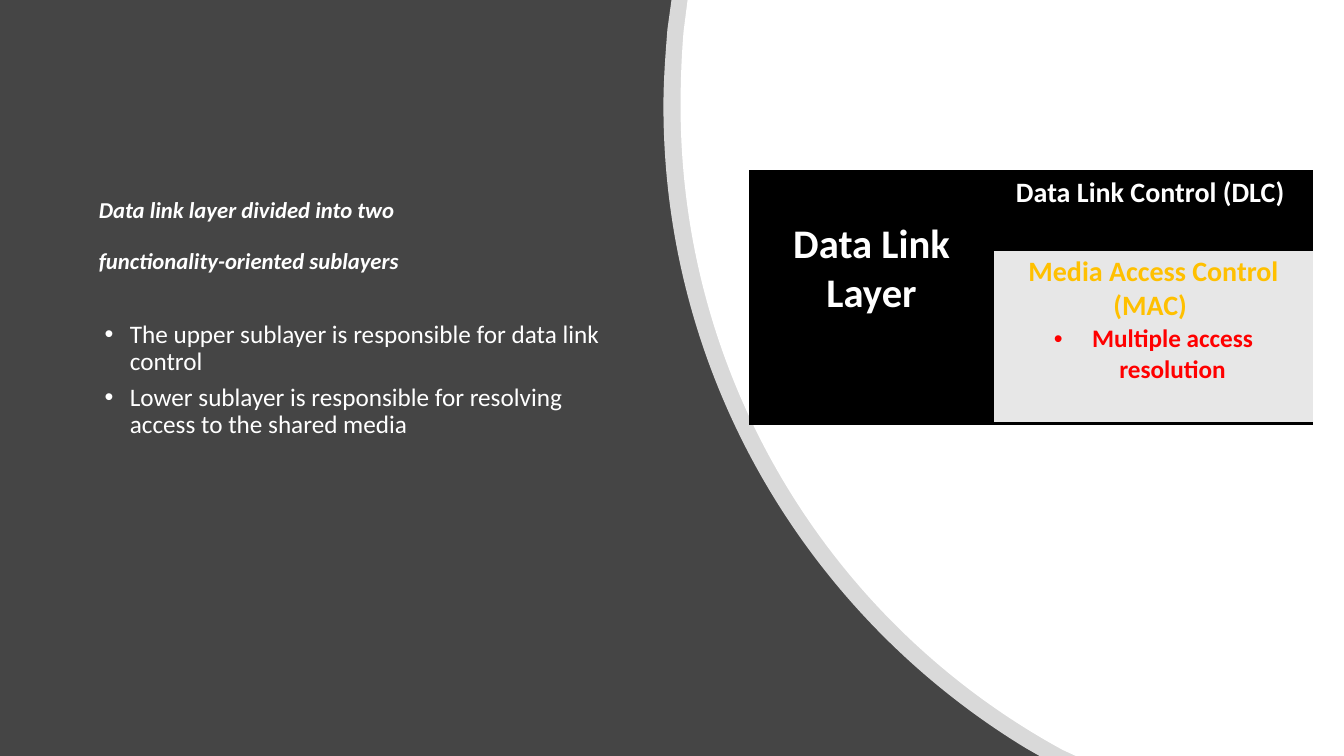
from dataclasses import dataclass

from lxml.etree import SubElement
from pptx import Presentation
from pptx.dml.color import RGBColor
from pptx.enum.text import MSO_ANCHOR, MSO_AUTO_SIZE, PP_ALIGN
from pptx.oxml.ns import qn
from pptx.util import Inches, Pt

DARK = RGBColor(0x45, 0x45, 0x45)
WHITE = RGBColor(0xFF, 0xFF, 0xFF)
BLACK = RGBColor(0, 0, 0)
GREY = RGBColor(0xE7, 0xE7, 0xE7)
GOLD = RGBColor(0xFF, 0xC0, 0x00)
RED = RGBColor(0xFF, 0, 0)
FONT = "Calibri"

Point = tuple[float, float]


@dataclass
class Line:
    text: str
    size: float
    color: RGBColor = WHITE
    bold: bool = False
    slant: bool = False
    indent: float = 0
    hang: float = 0
    align: PP_ALIGN = PP_ALIGN.LEFT
    space: float | None = None
    after: float = 0


@dataclass
class Panel:
    head: list[Point]
    curves: list[Point]  # three control points for each curve
    tail: list[Point]
    alpha: int = 100


@dataclass
class Cell:
    row: int
    col: int
    fill: RGBColor
    lines: list[Line]
    edges: str = ""
    top: float = 0.04


def write(frame, lines: list[Line]) -> None:
    frame.word_wrap = True
    for num, line in enumerate(lines):
        para = frame.paragraphs[0] if num == 0 else frame.add_paragraph()
        para.alignment = line.align
        para.space_before = Pt(0)
        para.space_after = Pt(line.after)
        if line.space:
            para.line_spacing = line.space
        if line.hang:
            props = para._p.get_or_add_pPr()
            props.set("marL", str(Inches(line.indent)))
            props.set("indent", str(-Inches(line.hang)))
            SubElement(props, qn("a:buFont"), typeface="Arial")
            SubElement(props, qn("a:buChar"), char="•")
        run = para.add_run()
        run.text = line.text
        font = run.font
        font.name, font.size = FONT, Pt(line.size)
        font.bold, font.italic = line.bold, line.slant
        font.color.rgb = line.color


def bend(shape, start: int, count: int) -> None:
    """Turn each three straight segments from start on into one cubic curve."""
    track = next(shape._element.iter(qn("a:path")))
    parts = list(track)[start:start + count]
    for num in range(0, count, 3):
        curve = SubElement(track, qn("a:cubicBezTo"))
        parts[num].addprevious(curve)
        for part in parts[num:num + 3]:
            curve.append(part[0])
            track.remove(part)


def draw_panel(slide, panel: Panel) -> None:
    dots = panel.head + panel.curves + panel.tail
    spots = [(Inches(x), Inches(y)) for x, y in dots]
    pen = slide.shapes.build_freeform(*spots[0], scale=1.0)
    pen.add_line_segments(spots[1:], close=True)
    shape = pen.convert_to_shape()
    bend(shape, len(panel.head), len(panel.curves))
    shape.shadow.inherit = False
    shape.line.fill.background()
    shape.fill.solid()
    shape.fill.fore_color.rgb = WHITE
    if panel.alpha < 100:
        tint = shape.fill._xPr.find(qn("a:solidFill"))[0]
        SubElement(tint, qn("a:alpha"), val=str(panel.alpha * 1000))


def set_edges(cell, edges: str) -> None:
    props = cell._tc.get_or_add_tcPr()
    for spot, side in enumerate("LRTB"):
        edge = SubElement(props, qn(f"a:ln{side}"), w=str(Pt(2)))
        if side in edges:
            fill = SubElement(edge, qn("a:solidFill"))
            SubElement(fill, qn("a:srgbClr"), val=str(BLACK))
        else:
            SubElement(edge, qn("a:noFill"))
        props.insert(spot, edge)


def fill_cell(table, item: Cell) -> None:
    cell = table.cell(item.row, item.col)
    cell.margin_left = cell.margin_right = Inches(0.07)
    cell.margin_top, cell.margin_bottom = Inches(item.top), Inches(0.04)
    cell.vertical_anchor = MSO_ANCHOR.TOP
    cell.fill.solid()
    cell.fill.fore_color.rgb = item.fill
    set_edges(cell, item.edges)
    write(cell.text_frame, item.lines)


PANELS = [
    Panel([(13.33, 0), (6.66, 0), (6.62, 0.29)],
          [(6.6, 0.54), (6.58, 0.8), (6.58, 1.05),
           (6.58, 3.75), (8.02, 6.11), (10.17, 7.42)],
          [(10.31, 7.5), (13.33, 7.5)], alpha=80),
    Panel([(6.82, 0), (13.33, 0), (13.33, 7.5), (10.67, 7.5), (10.54, 7.44)],
          [(8.28, 6.21), (6.75, 3.81), (6.75, 1.05),
           (6.75, 0.8), (6.76, 0.55), (6.78, 0.31)],
          []),
]
HEADING = [
    Line("Data link layer divided into two", 16.2, bold=True, slant=True,
         space=0.9, after=19),
    Line("functionality-oriented sublayers", 16.2, bold=True, slant=True, space=0.9),
]
POINTS = [
    Line(text, 18, indent=0.31, hang=0.25, space=0.9, after=6)
    for text in (
        "The upper sublayer is responsible for data link control",
        "Lower sublayer is responsible for resolving access to the shared media",
    )
]
MID = PP_ALIGN.CENTER
CELLS = [
    Cell(0, 0, BLACK, [Line("Data Link Layer", 29, bold=True, align=MID)],
         "TB", top=0.48),
    Cell(0, 1, BLACK, [Line("Data Link Control (DLC) ", 20, bold=True, align=MID)], "T"),
    Cell(1, 1, GREY, [
        Line("Media Access Control (MAC) ", 20, GOLD, True, align=MID),
        Line("Multiple access resolution", 18, RED, True,
             indent=0.38, hang=0.38, align=MID),
    ], "B"),
]


def main() -> None:
    deck = Presentation()
    deck.slide_width, deck.slide_height = Inches(13.33), Inches(7.5)
    slide = deck.slides.add_slide(deck.slide_layouts[5])
    slide.background.fill.solid()
    slide.background.fill.fore_color.rgb = DARK

    # Title
    title = slide.shapes.title
    title.left, title.top = Inches(0.88), Inches(1.53)
    title.width, title.height = Inches(5.37), Inches(1.45)
    frame = title.text_frame
    frame.auto_size = MSO_AUTO_SIZE.NONE
    frame.vertical_anchor = MSO_ANCHOR.MIDDLE
    frame.margin_top = Inches(0.23)
    write(frame, HEADING)

    # Bullet points
    body = slide.shapes.add_textbox(Inches(0.88), Inches(3.14), Inches(5.47), Inches(3.48))
    write(body.text_frame, POINTS)

    # Curved white panels
    for panel in PANELS:
        draw_panel(slide, panel)

    # Layer table
    table = slide.shapes.add_table(
        2, 2, Inches(7.43), Inches(1.7), Inches(5.59), Inches(2.5)).table
    table.first_row = table.horz_banding = False
    for col, width in zip(table.columns, (2.43, 3.16)):
        col.width = Inches(width)
    for row, height in zip(table.rows, (0.79, 1.71)):
        row.height = Inches(height)
    table.cell(0, 0).merge(table.cell(1, 0))
    for item in CELLS:
        fill_cell(table, item)
    set_edges(table.cell(1, 0), "B")

    deck.save("out.pptx")


if __name__ == "__main__":
    main()
